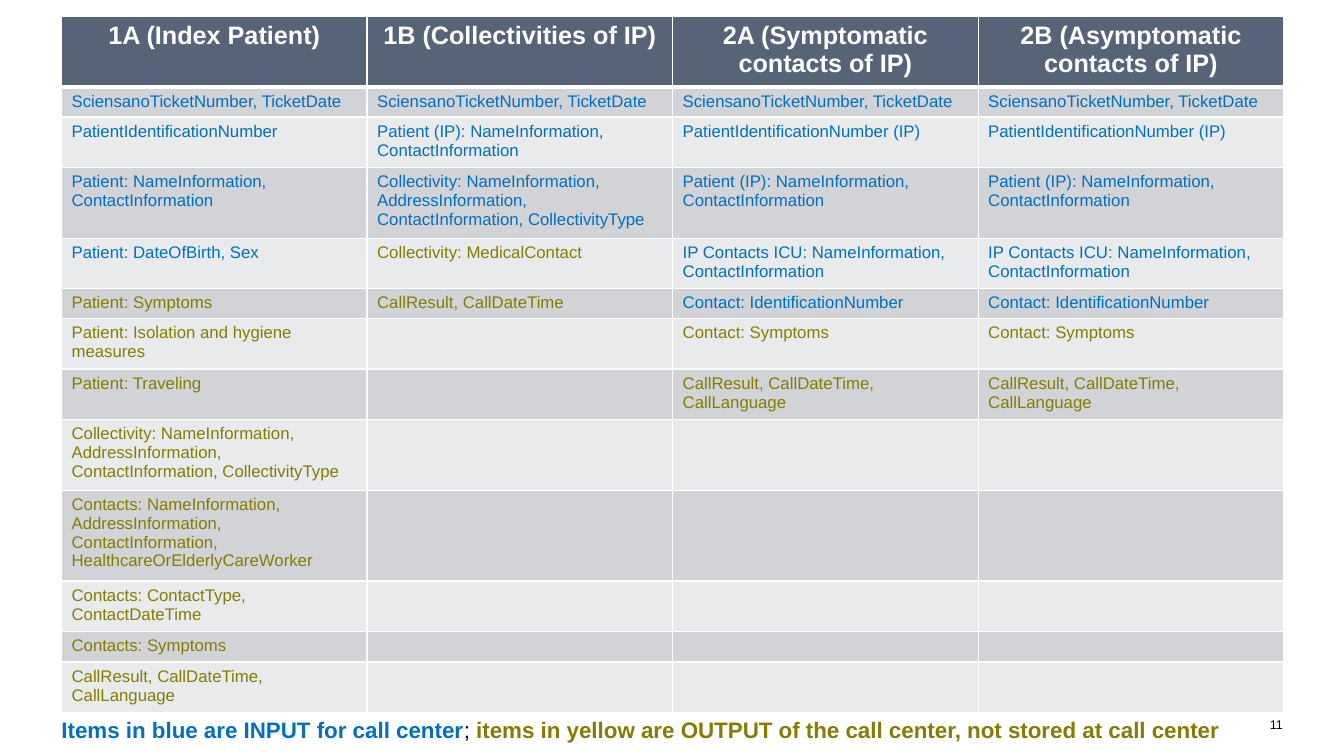
from lxml.etree import SubElement
from pptx import Presentation
from pptx.dml.color import RGBColor
from pptx.enum.text import MSO_ANCHOR, PP_ALIGN
from pptx.oxml.ns import qn
from pptx.util import Cm, Pt

BLUE, YELLOW, WHITE, BLACK = "0070C0", "867C03", "FFFFFF", "000000"
HEADER_FILL, BAND_FILLS = "566378", ("D1D3D6", "E9EAEC")

TICKET = "SciensanoTicketNumber, TicketDate"
COLLECTIVITY = ("Collectivity: NameInformation, AddressInformation, "
                "ContactInformation, CollectivityType")
IP_NAME = "Patient (IP): NameInformation, ContactInformation"
CALL = "CallResult, CallDateTime, CallLanguage"
CONTACT_INPUTS = [TICKET, "PatientIdentificationNumber (IP)", IP_NAME,
                  "IP Contacts ICU: NameInformation, ContactInformation",
                  "Contact: IdentificationNumber"]
CONTACT_OUTPUTS = ["Contact: Symptoms", CALL]

# Heading, input items, output items
COLUMNS = [
    ("1A (Index Patient)",
     [TICKET, "PatientIdentificationNumber",
      "Patient: NameInformation, ContactInformation",
      "Patient: DateOfBirth, Sex"],
     ["Patient: Symptoms", "Patient: Isolation and hygiene measures",
      "Patient: Traveling", COLLECTIVITY,
      "Contacts: NameInformation, AddressInformation, ContactInformation, "
      "HealthcareOrElderlyCareWorker",
      "Contacts: ContactType, ContactDateTime", "Contacts: Symptoms", CALL]),
    ("1B (Collectivities of IP)",
     [TICKET, IP_NAME, COLLECTIVITY],
     ["Collectivity: MedicalContact", "CallResult, CallDateTime"]),
    ("2A (Symptomatic contacts of IP)", CONTACT_INPUTS, CONTACT_OUTPUTS),
    ("2B (Asymptomatic contacts of IP)", CONTACT_INPUTS, CONTACT_OUTPUTS),
]
ROW_LINES = [1, 2, 3, 2, 1, 2, 2, 3, 4, 2, 1, 2]


def add_run(paragraph, text, size, color, bold=False):
    run = paragraph.add_run()
    run.text = text
    run.font.name = "Arial"
    run.font.size = Pt(size)
    run.font.bold = bold
    run.font.color.rgb = RGBColor.from_string(color)


def style_cell(cell, fill, bottom_width, top_width):
    """Give the cell white borders and a solid fill."""
    properties = cell._tc.get_or_add_tcPr()
    for side, width in (("L", 1), ("R", 1), ("T", top_width), ("B", bottom_width)):
        line = SubElement(properties, qn(f"a:ln{side}"), w=str(Pt(width)))
        solid = SubElement(line, qn("a:solidFill"))
        SubElement(solid, qn("a:srgbClr"), val=WHITE)
    cell.fill.solid()
    cell.fill.fore_color.rgb = RGBColor.from_string(fill)


presentation = Presentation()
presentation.slide_width, presentation.slide_height = Cm(33.87), Cm(19.05)
slide = presentation.slides.add_slide(presentation.slide_layouts[6])

# Table of items per call type
row_heights = [1.78] + [0.25 + 0.51 * lines for lines in ROW_LINES]
table = slide.shapes.add_table(len(row_heights), len(COLUMNS), Cm(1.55), Cm(0.41),
                               Cm(30.8), Cm(sum(row_heights))).table
for row, height in zip(table.rows, row_heights):
    row.height = Cm(height)

for column, (heading, inputs, outputs) in enumerate(COLUMNS):
    table.columns[column].width = Cm(7.7)
    header = table.cell(0, column)
    style_cell(header, HEADER_FILL, 3, 1)
    paragraph = header.text_frame.paragraphs[0]
    paragraph.alignment = PP_ALIGN.CENTER
    add_run(paragraph, heading, 18, WHITE, True)

    items = [(text, BLUE) for text in inputs] + [(text, YELLOW) for text in outputs]
    for index in range(len(ROW_LINES)):
        cell = table.cell(index + 1, column)
        style_cell(cell, BAND_FILLS[index % 2], 1, 1 if index else 3)
        paragraph = cell.text_frame.paragraphs[0]
        if index < len(items):
            text, color = items[index]
            add_run(paragraph, text, 12, color)
        else:
            SubElement(paragraph._p, qn("a:endParaRPr"), sz="1200")

# Colour key and slide number
key_runs = [("Items in blue are INPUT for call center", 16, BLUE, True),
            ("; ", 16, BLACK, False),
            ("items in yellow are OUTPUT of the call center, not stored at call center",
             16, YELLOW, True)]
for left, top, width, height, anchor, alignment, runs in (
        (1.55, 18.04, 29.7, 0.76, MSO_ANCHOR.TOP, PP_ALIGN.LEFT, key_runs),
        (31.42, 18.06, 0.91, 0.38, MSO_ANCHOR.BOTTOM, PP_ALIGN.RIGHT,
         [("11", 9, BLACK, False)])):
    frame = slide.shapes.add_textbox(Cm(left), Cm(top), Cm(width), Cm(height)).text_frame
    frame.margin_left = frame.margin_right = frame.margin_top = frame.margin_bottom = 0
    frame.word_wrap = True
    frame.vertical_anchor = anchor
    paragraph = frame.paragraphs[0]
    paragraph.alignment = alignment
    for run in runs:
        add_run(paragraph, *run)

presentation.save("out.pptx")
